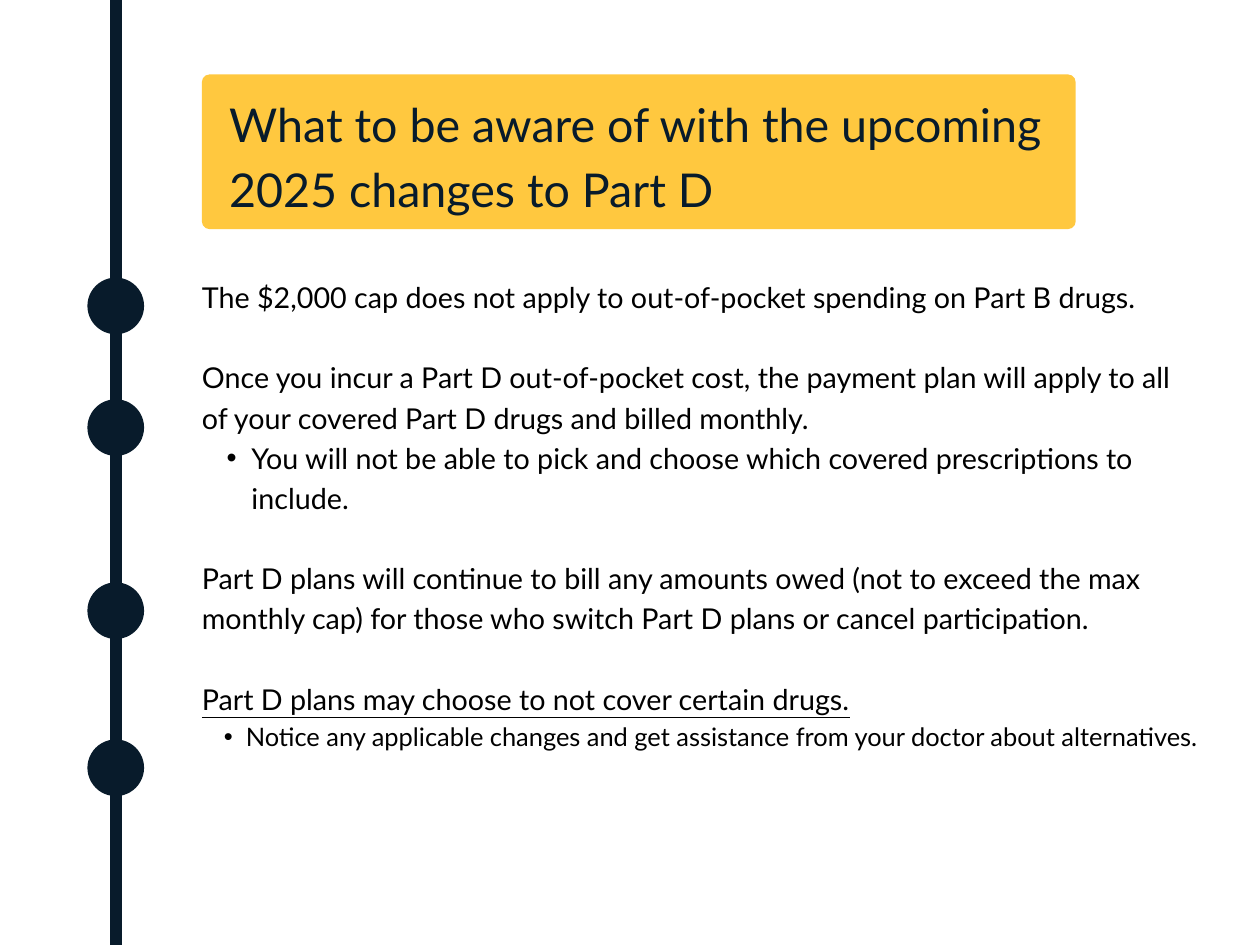
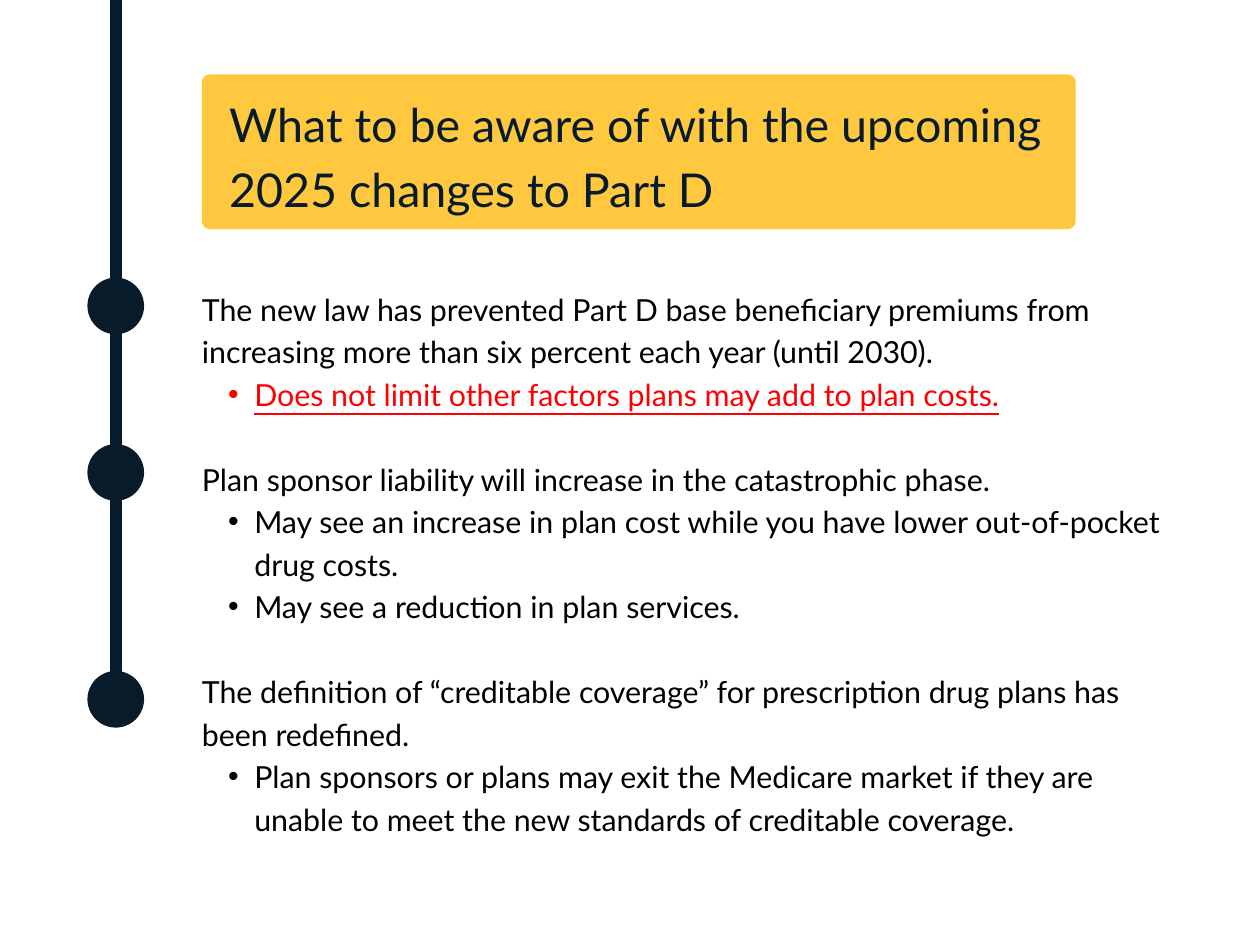
from dataclasses import dataclass

from lxml import etree
from pptx import Presentation
from pptx import slide as s
from pptx import util as u
from pptx.dml.color import RGBColor
from pptx.enum import shapes, text
from pptx.oxml import ns
from pptx.text import text as t


@dataclass(frozen=True)
class Theme:
    font: str = "Lato"
    navy: str = "081B2B"
    gold: str = "FFC83F"
    black: str = "000000"
    red: str = "FF0000"
    title_size: float = 28.4
    spine_width: float = 7.5
    leading: float = 1.4
    hang: float = 0.012


@dataclass(frozen=True)
class Point:
    words: str
    size: float
    bullet: bool = False
    colour: str = Theme.black
    underline: bool = False


@dataclass(frozen=True)
class TimelinePage:
    body_top: float
    body_width: float
    body_height: float
    spine_end: float
    dot_tops: tuple[float, ...]
    points: tuple[Point, ...]


THEME = Theme()
TITLE = "What to be aware of with the upcoming 2025 changes to Part D"
WIDTH, HEIGHT = 10.67, 8
SPINE_X, DOT_SIZE = 0.98, 0.48
CONTENT_LEFT = 1.71

PAGES = (
    TimelinePage(
        body_top=2.32, body_width=8.44, body_height=5.49, spine_end=HEIGHT,
        dot_tops=(2.35, 3.38, 4.93, 6.26),
        points=(
            Point("The $2,000 cap does not apply to out-of-pocket spending on "
                  "Part B drugs.", 17.5),
            Point("Once you incur a Part D out-of-pocket cost, the payment plan will "
                  "apply to all of your covered Part D drugs and billed monthly.", 17.5),
            Point("You will not be able to pick and choose which covered "
                  "prescriptions to include.", 17.5, bullet=True),
            Point("Part D plans will continue to bill any amounts owed (not to exceed "
                  "the max monthly cap) for those who switch Part D plans or cancel "
                  "participation.", 17.5),
            Point("Part D plans may choose to not cover certain drugs.", 17.5,
                  underline=True),
            Point("Notice any applicable changes and get assistance from your doctor "
                  "about alternatives.", 15.5, bullet=True),
        ),
    ),
    TimelinePage(
        body_top=2.41, body_width=8.16, body_height=5.29, spine_end=5.92,
        dot_tops=(2.35, 3.76, 5.68),
        points=(
            Point("The new law has prevented Part D base beneficiary premiums from "
                  "increasing more than six percent each year (until 2030).", 18.5),
            Point("Does not limit other factors plans may add to plan costs.", 18.5,
                  bullet=True, colour=THEME.red, underline=True),
            Point("Plan sponsor liability will increase in the catastrophic phase.",
                  18.5),
            Point("May see an increase in plan cost while you have lower "
                  "out-of-pocket drug costs.", 18.5, bullet=True),
            Point("May see a reduction in plan services.", 18.5, bullet=True),
            Point("The definition of “creditable coverage” for prescription drug plans "
                  "has been redefined.", 18.5),
            Point("Plan sponsors or plans may exit the Medicare market if they are "
                  "unable to meet the new standards of creditable coverage.", 18.5,
                  bullet=True),
        ),
    ),
)


def prepare_frame(frame: t.TextFrame) -> None:
    frame.margin_left = frame.margin_right = u.Inches(0)
    frame.margin_top = frame.margin_bottom = u.Inches(0)
    frame.word_wrap = True
    frame.auto_size = text.MSO_AUTO_SIZE.NONE
    frame.vertical_anchor = text.MSO_ANCHOR.TOP


def write(frame: t.TextFrame, words: str, *, size: float, colour: str,
          bullet: bool = False, underline: bool = False) -> None:
    first = not frame.text
    para = frame.paragraphs[0] if first else frame.add_paragraph()
    leading = u.Pt(round(size * THEME.leading, 1))
    if bullet:
        para.level = 1
        hang = u.Inches(size * THEME.hang)
        properties = para._p.get_or_add_pPr()
        properties.set("marL", str(2 * hang))
        properties.set("indent", str(-hang))
        etree.SubElement(properties, ns.qn("a:buFont"), typeface="Arial")
        etree.SubElement(properties, ns.qn("a:buChar"), char="•")
    para.alignment = text.PP_ALIGN.LEFT
    para.line_spacing = leading
    para.space_before = u.Pt(0) if first or bullet else leading
    span = para.add_run()
    span.text = words
    span.font.name = THEME.font
    span.font.size = u.Pt(size)
    span.font.color.rgb = RGBColor.from_string(colour)
    span.font.underline = underline


def add_block(page: s.Slide, kind: shapes.MSO_SHAPE, left: float, top: float,
              width: float, height: float, colour: str):
    block = page.shapes.add_shape(kind, u.Inches(left), u.Inches(top),
                                  u.Inches(width), u.Inches(height))
    block.shadow.inherit = False
    block.fill.solid()
    block.fill.fore_color.rgb = RGBColor.from_string(colour)
    block.line.fill.background()
    return block


def add_body(page: s.Slide, content: TimelinePage) -> None:
    box = page.shapes.add_textbox(
        u.Inches(CONTENT_LEFT), u.Inches(content.body_top),
        u.Inches(content.body_width), u.Inches(content.body_height))
    prepare_frame(box.text_frame)
    for point in content.points:
        write(box.text_frame, point.words, size=point.size, colour=point.colour,
              bullet=point.bullet, underline=point.underline)


def add_timeline(page: s.Slide, content: TimelinePage) -> None:
    spine = page.shapes.add_connector(
        shapes.MSO_CONNECTOR.STRAIGHT, u.Inches(SPINE_X),
        u.Inches(content.spine_end), u.Inches(SPINE_X), u.Inches(0))
    spine.line.color.rgb = RGBColor.from_string(THEME.navy)
    spine.line.width = u.Pt(THEME.spine_width)
    etree.SubElement(spine.element.spPr, ns.qn("a:effectLst"))
    for top in content.dot_tops:
        add_block(page, shapes.MSO_SHAPE.OVAL, SPINE_X - DOT_SIZE / 2, top,
                  DOT_SIZE, DOT_SIZE, THEME.navy)


def add_title(page: s.Slide) -> None:
    banner = add_block(page, shapes.MSO_SHAPE.ROUNDED_RECTANGLE, CONTENT_LEFT, 0.63,
                       7.4, 1.31, THEME.gold)
    banner.adjustments[0] = 0.05
    title = page.shapes.title
    title.left, title.top = u.Inches(1.94), u.Inches(0.73)
    title.width, title.height = u.Inches(6.94), u.Inches(1.06)
    prepare_frame(title.text_frame)
    write(title.text_frame, TITLE, size=THEME.title_size, colour=THEME.navy)
    page.shapes.element.append(title.element)


def main() -> None:
    deck = Presentation()
    deck.slide_width, deck.slide_height = u.Inches(WIDTH), u.Inches(HEIGHT)
    layout = deck.slide_layouts.get_by_name("Title Only")
    for content in PAGES:
        page = deck.slides.add_slide(layout)
        add_body(page, content)
        add_timeline(page, content)
        add_title(page)
    deck.save("out.pptx")


if __name__ == "__main__":
    main()
